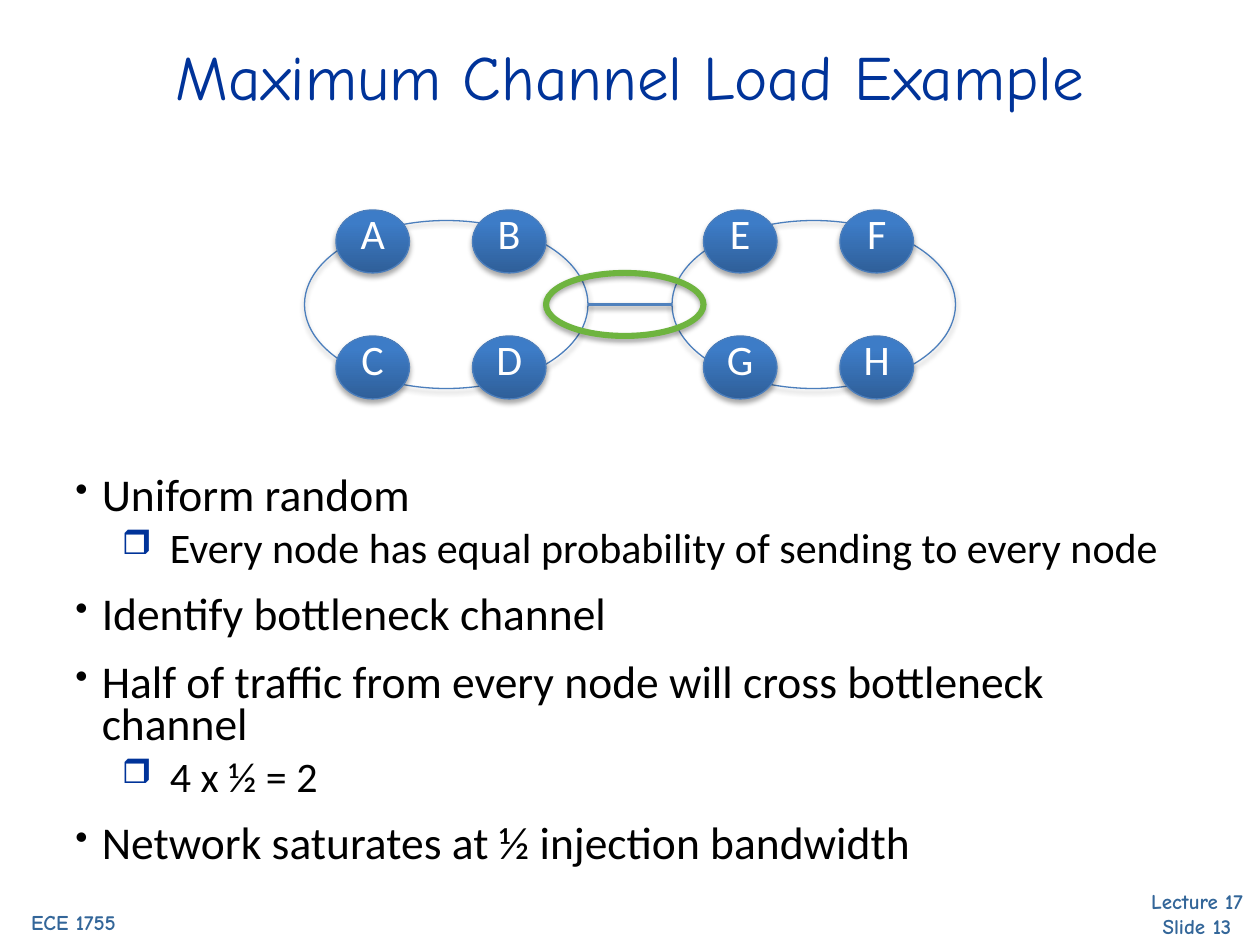
"""Build the slide on maximum channel load in a two-ring network."""
from lxml.etree import SubElement as Sub
from pptx import Presentation
from pptx.dml.color import RGBColor
from pptx.enum.shapes import MSO_CONNECTOR as Link, MSO_SHAPE as Shape
from pptx.enum.text import MSO_ANCHOR as Anchor, PP_ALIGN as Align
from pptx.oxml.ns import qn
from pptx.util import Inches, Pt

UNIT = Inches(1) / 12
TITLE = "Maximum Channel Load Example"
BULLETS = [
    (0, "Uniform random"),
    (1, "Every node has equal probability of sending to every node"),
    (0, "Identify bottleneck channel"),
    (0, "Half of traffic from every node will cross bottleneck channel"),
    (1, "4 x ½ = 2"),
    (0, "Network saturates at ½ injection bandwidth"),
]
LEVELS = [
    dict(size=26, line=24, before=15, left=0.21, hang=0.21, char="•", color="000000"),
    dict(size=24, line=22, before=7, left=0.75, hang=0.38, char="❒", color="003399"),
]
FOOTERS = [
    ((106, 84, 16, 6), ["Lecture 17", "Slide 13"]),
    ((-1, 86, 16, 3.6), ["ECE 1755"]),
]
RINGS = [(29, ["AB", "CD"]), (64, ["EF", "GH"])]
RING_TOP, RING_W, RING_H = 21, 27, 16
NODE_X, NODE_Y, NODE_W, NODE_H = 3, -1, 7, 6
STEP_X, STEP_Y = 13, 12
HIGHLIGHT = (52, 26, 15, 6)
GRADIENT = [(0, "2F5F99"), (0.8, "3D7CC7")]
TITLE_FONT = dict(name="Comic Neue", size=Pt(36))
FOOTER_FONT = dict(name="Comic Neue", size=Pt(12), bold=True)
NODE_FONT = dict(name="Calibri", size=Pt(24))


def rgb(color):
    """Turn a hex string into a colour."""
    return RGBColor.from_string(color)


def grid(*cells):
    """Turn grid units into slide lengths."""
    return [round(c * UNIT) for c in cells]


def write(p, text, font, color):
    """Add one formatted run to a paragraph."""
    r = p.add_run()
    r.text = text
    for key, value in font.items():
        setattr(r.font, key, value)
    r.font.color.rgb = rgb(color)


def text_box(slide, box):
    """Add a wrapping text box and return its frame."""
    tf = slide.shapes.add_textbox(*grid(*box)).text_frame
    tf.word_wrap = True
    return tf


def paragraphs(tf, count):
    """Return the given number of paragraphs of a frame."""
    return [tf.paragraphs[0]] + [tf.add_paragraph() for _ in range(count - 1)]


def centred(slide, box, lines, font, color):
    """Add centred lines of text."""
    tf = text_box(slide, box)
    for p, line in zip(paragraphs(tf, len(lines)), lines):
        p.alignment = Align.CENTER
        write(p, line, font, color)


def bullet(p, level, text):
    """Format a paragraph as a bullet of its level."""
    fmt = LEVELS[level]
    p.level = level
    p.line_spacing, p.space_before = Pt(fmt["line"]), Pt(fmt["before"])
    pPr = p._p.get_or_add_pPr()
    pPr.set("marL", str(Inches(fmt["left"])))
    pPr.set("indent", str(-Inches(fmt["hang"])))
    Sub(Sub(pPr, qn("a:buClr")), qn("a:srgbClr"), val=fmt["color"])
    Sub(pPr, qn("a:buSzPct"), val="80000")
    Sub(pPr, qn("a:buChar"), char=fmt["char"])
    write(p, text, dict(name="Calibri", size=Pt(fmt["size"])), "000000")


def outline(sp, color, width, alpha=35):
    """Set the line and a soft shadow straight below."""
    sp.line.color.rgb = rgb(color)
    sp.line.width = Pt(width)
    effects = Sub(sp._element.spPr, qn("a:effectLst"))
    shadow = Sub(effects, qn("a:outerShdw"), blurRad=str(Pt(3.1)), dist=str(Pt(1.8)),
                 dir="5400000", rotWithShape="0")
    Sub(Sub(shadow, qn("a:srgbClr"), val="000000"), qn("a:alpha"), val=str(alpha * 1000))


def ellipse(slide, box, color="4B7EBC", width=0.75):
    """Add an unfilled ellipse."""
    sp = slide.shapes.add_shape(Shape.OVAL, *grid(*box))
    sp.fill.background()
    outline(sp, color, width)
    return sp


def node(slide, x, y, name):
    """Add a shaded network node with its letter."""
    sp = ellipse(slide, (x, y, NODE_W, NODE_H))
    sp.fill.gradient()
    sp.fill.gradient_angle = 90
    for stop, (position, color) in zip(sp.fill.gradient_stops, GRADIENT):
        stop.position, stop.color.rgb = position, rgb(color)
    tf = sp.text_frame
    for key, value in dict(word_wrap=False, vertical_anchor=Anchor.BOTTOM,
                           margin_left=0, margin_right=0).items():
        setattr(tf, key, value)
    tf.paragraphs[0].alignment = Align.CENTER
    write(tf.paragraphs[0], name, NODE_FONT, "FFFFFF")


def main():
    """Build and save the slide."""
    prs = Presentation()
    prs.slide_width, prs.slide_height = Inches(10), Inches(7.5)
    slide = prs.slides.add_slide(prs.slide_layouts[6])
    for box, lines in FOOTERS:
        centred(slide, box, lines, FOOTER_FONT, "336699")
    centred(slide, (4.5, 3, 111, 8), [TITLE], TITLE_FONT, "003399")
    body = text_box(slide, (6, 45, 108, 43))
    for p, (level, text) in zip(paragraphs(body, len(BULLETS)), BULLETS):
        bullet(p, level, text)
    for left, rows in RINGS:
        ellipse(slide, (left, RING_TOP, RING_W, RING_H))
        for i, row in enumerate(rows):
            for j, name in enumerate(row):
                node(slide, left + NODE_X + j * STEP_X, RING_TOP + NODE_Y + i * STEP_Y, name)
    middle = RING_TOP + RING_H / 2
    ends = grid(RINGS[0][0] + RING_W, middle, RINGS[1][0], middle)
    outline(slide.shapes.add_connector(Link.STRAIGHT, *ends), "4F81BD", 2, 38)
    ellipse(slide, HIGHLIGHT, "6EB43F", 3.5)
    prs.save("out.pptx")


if __name__ == "__main__":
    main()
